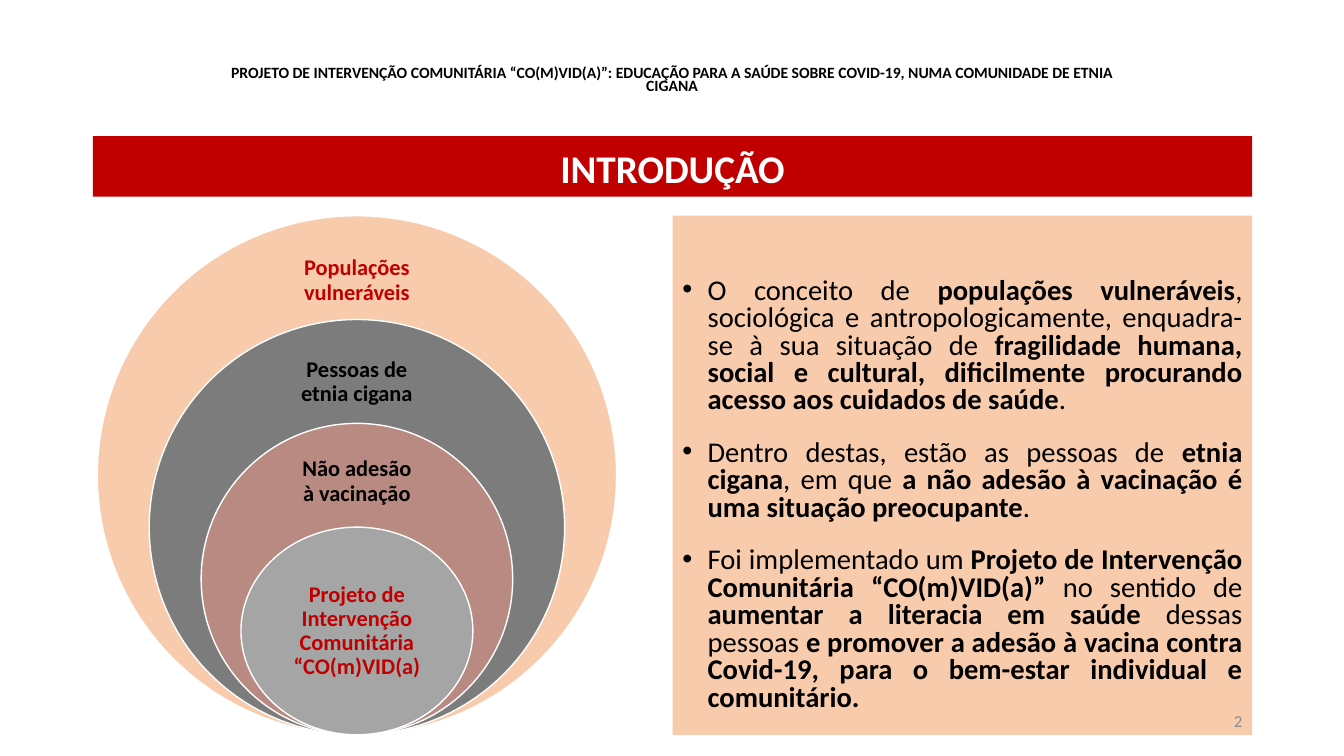
from lxml import etree
from pptx import Presentation
from pptx.dml.color import RGBColor
from pptx.enum.shapes import MSO_SHAPE as Shape
from pptx.enum.text import MSO_ANCHOR as Anchor, MSO_AUTO_SIZE as Fit, PP_ALIGN as Align
from pptx.oxml.ns import qn
from pptx.util import Inches, Pt

HEAD = ("PROJETO DE INTERVENÇÃO COMUNITÁRIA “CO(M)VID(A)”: EDUCAÇÃO PARA A SAÚDE "
        "SOBRE COVID-19, NUMA COMUNIDADE DE ETNIA CIGANA")
TITLE = "INTRODUÇÃO"
NUMBER = "2"
# Text between asterisks is bold.
POINTS = [
    "O conceito de *populações vulneráveis*, sociológica e antropologicamente, "
    "enquadra-se à sua situação de *fragilidade humana, social e cultural, "
    "dificilmente procurando acesso aos cuidados de saúde*.",
    "Dentro destas, estão as pessoas de *etnia cigana*, em que *a não adesão à "
    "vacinação é uma situação preocupante*.",
    "Foi implementado um *Projeto de Intervenção Comunitária “CO(m)VID(a)” *no "
    "sentido de *aumentar a literacia em saúde *dessas pessoas *e promover a adesão "
    "à vacina contra Covid-19, para o bem-estar individual e comunitário.*",
]
# Text, fill, font colour, label box (top, width, height)
RINGS = [
    ("Populações vulneráveis", "peach", "red", (2.4, 1.44, 0.77)),
    ("Pessoas de etnia cigana", "gray", "black", (3.42, 1.44, 0.74)),
    ("Não adesão à vacinação", "rose", "black", (4.43, 1.44, 0.7)),
    ("Projeto de Intervenção Comunitária “CO(m)VID(a)", "silver", "red",
     (5.75, 1.63, 1.03)),
]
COLORS = {"peach": "F8CBAD", "red": "C00000", "gray": "7C7C7C", "rose": "B98A82",
          "silver": "A5A5A5", "black": "000000", "white": "FFFFFF", "page": "8C8C8C"}

WIDE, HIGH = 13.33, 7.5
LEFT, SPAN = 0.92, 11.5
TOP, SIDE = 2.14, 5.15
BASE = TOP + SIDE
MID = 3.54
CORE = 2.3


def tint(name):
    return RGBColor.from_string(COLORS[name])


def paint(shape, name):
    shape.fill.solid()
    shape.fill.fore_color.rgb = tint(name)


def place(shape, box):
    shape.left, shape.top, shape.width, shape.height = map(Inches, box)


def setup(frame, anchor, pads=(0.1, 0.05, 0.1, 0.05)):
    """Wrap the text, anchor it and set left, top, right and bottom insets."""
    frame.word_wrap = True
    frame.auto_size = Fit.NONE
    frame.vertical_anchor = anchor
    (frame.margin_left, frame.margin_top,
     frame.margin_right, frame.margin_bottom) = map(Inches, pads)


def style(para, size, color, bold=None, align=Align.CENTER, line=1.0):
    para.alignment = align
    para.line_spacing = line
    font = para.font
    font.name, font.size, font.bold = "Calibri", Pt(size), bold
    font.color.rgb = tint(color)


def label(box, text, size, color, anchor=Anchor.MIDDLE, pads=(0.1, 0.05, 0.1, 0.05),
          **look):
    frame = slide.shapes.add_textbox(*map(Inches, box)).text_frame
    setup(frame, anchor, pads)
    frame.text = text
    style(frame.paragraphs[0], size, color, **look)


def bullet(para):
    props = para._p.get_or_add_pPr()
    props.set("marL", str(Inches(0.25)))
    props.set("indent", str(-Inches(0.25)))
    mark = etree.Element(qn("a:buFont"), typeface="Arial")
    char = etree.Element(qn("a:buChar"), char="•")
    props.find(qn("a:defRPr")).addprevious(mark)
    mark.addnext(char)


deck = Presentation()
deck.slide_width, deck.slide_height = Inches(WIDE), Inches(HIGH)
slide = deck.slides.add_slide(deck.slide_layouts[5])

title = slide.shapes.title
place(title, (LEFT, 1.35, SPAN, 0.6))
paint(title, "red")
setup(title.text_frame, Anchor.BOTTOM)
title.text_frame.text = TITLE
style(title.text_frame.paragraphs[0], 28, "white", bold=True)

label((1.92, 0.6, 9.49, 0.65), HEAD, 11.2, "black", anchor=Anchor.TOP,
      pads=(0.1, 0.07, 0.1, 0.05), bold=True, line=0.7)

panel = slide.shapes.add_textbox(
    *map(Inches, (LEFT + SPAN / 2, TOP, SPAN / 2, SIDE)))
paint(panel, "peach")
frame = panel.text_frame
setup(frame, Anchor.TOP, (0.1, 0.62, 0.1, 0.05))
for i, point in enumerate(POINTS):
    para = frame.add_paragraph() if i else frame.paragraphs[0]
    style(para, 20.4, "black", align=Align.JUSTIFY, line=0.8)
    para.space_before = Pt(18 if i else 0)
    bullet(para)
    for j, part in enumerate(point.split("*")):
        if part:
            run = para.add_run()
            run.text = part
            run.font.bold = j % 2 == 1

label((LEFT + SPAN - 3, 6.95, 3, 0.4), NUMBER, 12, "page", align=Align.RIGHT)

for i, (text, fill, color, (top, width, height)) in enumerate(RINGS):
    size = SIDE * (1 - i / 5)
    across = CORE if i == len(RINGS) - 1 else size
    ring = slide.shapes.add_shape(
        Shape.OVAL, *map(Inches, (MID - across / 2, BASE - size, across, size)))
    ring.shadow.inherit = False
    paint(ring, fill)
    ring.line.color.rgb = tint("white")
    ring.line.width = Pt(1)
    label((MID - width / 2, top, width, height), text, 16, color,
          pads=(0.12,) * 4, bold=True, line=0.9)

deck.save("out.pptx")
